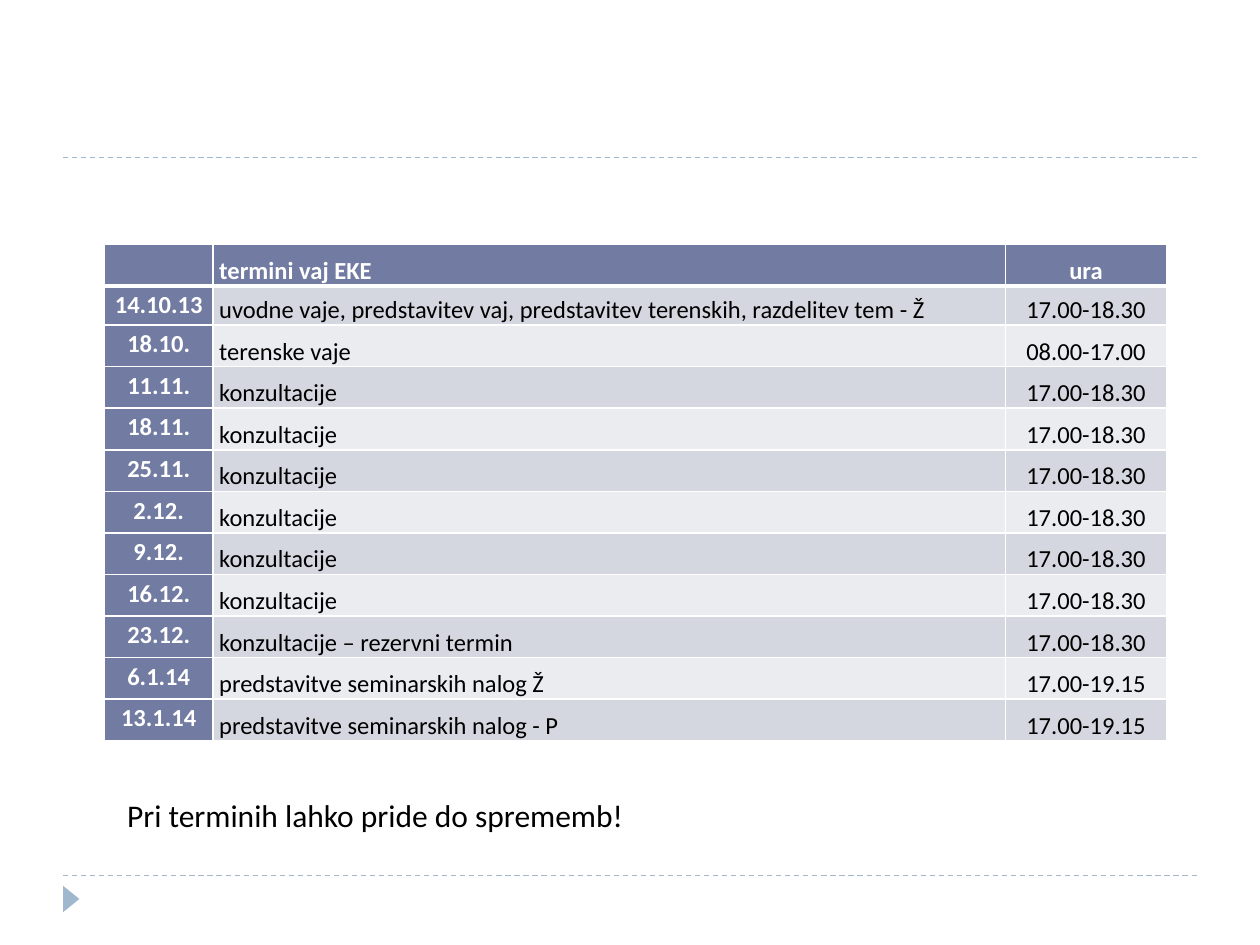
"""Build the slide with the schedule of EKE exercises."""
from dataclasses import dataclass
from typing import NamedTuple

from lxml import etree
from pptx import Presentation, dml, util as u
from pptx.dml import color
from pptx.enum import dml as line_styles, shapes, text
from pptx.oxml import ns


@dataclass(frozen=True)
class Theme:
    font: str = "Calibri"
    header: str = "727CA3"
    bands: tuple = ("D5D7E0", "EBECF0")
    accent: str = "9FB8CD"
    light: str = "FFFFFF"
    dark: str = "000000"
    table_size: float = 14
    note_size: float = 18
    rule_width: float = 0.75
    grid_width: float = 1
    header_rule_width: float = 3


class Session(NamedTuple):
    date: str
    topic: str
    hours: str


class Box(NamedTuple):
    left: float
    top: float
    width: float
    height: float


THEME = Theme()
SLIDE_WIDTH, SLIDE_HEIGHT = 10, 7.5
MARGIN = SLIDE_WIDTH / 20
RULE_HEIGHTS = (SLIDE_HEIGHT / 6, 6.95)
MARKER = Box(0.46, 7.07, 0.21, 0.13)
SCHEDULE = Box(0.83, 1.94, 8.43, 3.9)
NOTE = Box(0.91, 6.27, 8.35, 0.4)
COLUMN_WIDTHS = (0.86, 6.29, 1.28)
ROW_HEIGHT, FIRST_SESSION_HEIGHT = 0.33, 0.31
EVENING, LONG_EVENING = "17.00-18.30", "17.00-19.15"

SESSIONS = [
    Session("", "termini vaj EKE", "ura"),
    Session("14.10.13", "uvodne vaje, predstavitev vaj, predstavitev terenskih, razdelitev tem - Ž", EVENING),
    Session("18.10.", "terenske vaje", "08.00-17.00"),
    *(Session(date, "konzultacije", EVENING)
      for date in ("11.11.", "18.11.", "25.11.", "2.12.", "9.12.", "16.12.")),
    Session("23.12.", "konzultacije – rezervni termin", EVENING),
    Session("6.1.14", "predstavitve seminarskih nalog Ž", LONG_EVENING),
    Session("13.1.14", "predstavitve seminarskih nalog - P", LONG_EVENING),
]


def rgb(value: str) -> color.RGBColor:
    """Turn a hex value into a colour."""
    return color.RGBColor.from_string(value)


def inches(box: Box) -> list:
    """Convert a box to slide lengths."""
    return [u.Inches(length) for length in box]


def apply(target, formats: dict) -> None:
    """Set each format value on the target."""
    for attribute, value in formats.items():
        setattr(target, attribute, value)


def write(paragraph, words: str, size: float, ink: str, bold: bool = False) -> None:
    """Add one formatted run to a paragraph."""
    run = paragraph.add_run()
    run.text = words
    apply(run.font, {"name": THEME.font, "size": u.Pt(size), "bold": bold})
    run.font.color.rgb = rgb(ink)


def draw_rule(slide, height: float) -> None:
    """Draw a dashed rule across the slide."""
    ends = (MARGIN, height, SLIDE_WIDTH - MARGIN, height)
    rule = slide.shapes.add_connector(shapes.MSO_CONNECTOR.STRAIGHT, *map(u.Inches, ends))
    apply(rule.line, {"width": u.Pt(THEME.rule_width), "dash_style": line_styles.MSO_LINE.DASH})
    rule.line.color.rgb = rgb(THEME.accent)
    etree.SubElement(rule._element.spPr, ns.qn("a:effectLst"))


def draw_marker(slide) -> None:
    """Draw the triangle in the footer."""
    marker = slide.shapes.add_shape(shapes.MSO_SHAPE.ISOSCELES_TRIANGLE, *inches(MARKER))
    marker.rotation = 90
    marker.shadow.inherit = False
    marker.fill.solid()
    marker.fill.fore_color.rgb = rgb(THEME.accent)
    marker.line.fill.background()


def add_borders(cell, row: int) -> None:
    """Give a cell white borders, heavier between header and sessions."""
    properties = cell._tc.get_or_add_tcPr()
    for side in "LRTB":
        heavy = (row, side) in ((0, "B"), (1, "T"))
        width = THEME.header_rule_width if heavy else THEME.grid_width
        border = etree.SubElement(properties, ns.qn(f"a:ln{side}"), w=str(u.Pt(width)))
        fill = etree.SubElement(border, ns.qn("a:solidFill"))
        etree.SubElement(fill, ns.qn("a:srgbClr"), val=THEME.light)


def fill_cell(cell, row: int, column: int, words: str) -> None:
    """Format one schedule cell and write its words."""
    heading = row == 0 or column == 0
    add_borders(cell, row)
    cell.fill.solid()
    cell.fill.fore_color.rgb = rgb(THEME.header if heading else THEME.bands[(row - 1) % 2])
    apply(cell, {
        "margin_left": u.Inches(0.05), "margin_right": u.Inches(0.05),
        "margin_top": 0, "margin_bottom": 0,
        "vertical_anchor": text.MSO_ANCHOR.BOTTOM if column else text.MSO_ANCHOR.TOP,
    })
    if words:
        paragraph = cell.text_frame.paragraphs[0]
        apply(paragraph, {
            "line_spacing": 1.15,
            "alignment": text.PP_ALIGN.LEFT if column == 1 else text.PP_ALIGN.CENTER,
        })
        write(paragraph, words, THEME.table_size, THEME.light if heading else THEME.dark, heading)


def draw_schedule(slide) -> None:
    """Draw the table of sessions."""
    frame = slide.shapes.add_table(len(SESSIONS), len(COLUMN_WIDTHS), *inches(SCHEDULE))
    schedule = frame.table
    apply(schedule, {"first_col": True})
    for column, width in zip(schedule.columns, COLUMN_WIDTHS):
        column.width = u.Inches(width)
    for row, session in enumerate(SESSIONS):
        schedule.rows[row].height = u.Inches(FIRST_SESSION_HEIGHT if row == 1 else ROW_HEIGHT)
        for column, words in enumerate(session):
            fill_cell(schedule.cell(row, column), row, column, words)


def draw_note(slide) -> None:
    """Write the note under the schedule."""
    frame = slide.shapes.add_textbox(*inches(NOTE)).text_frame
    apply(frame, {"word_wrap": True, "auto_size": text.MSO_AUTO_SIZE.SHAPE_TO_FIT_TEXT})
    write(frame.paragraphs[0], "Pri terminih lahko pride do sprememb!", THEME.note_size, THEME.dark)


def main() -> None:
    """Build and save the slide."""
    deck = Presentation()
    apply(deck, {"slide_width": u.Inches(SLIDE_WIDTH), "slide_height": u.Inches(SLIDE_HEIGHT)})
    slide = deck.slides.add_slide(deck.slide_layouts[6])
    for height in RULE_HEIGHTS:
        draw_rule(slide, height)
    draw_marker(slide)
    draw_schedule(slide)
    draw_note(slide)
    deck.save("out.pptx")


if __name__ == "__main__":
    main()
